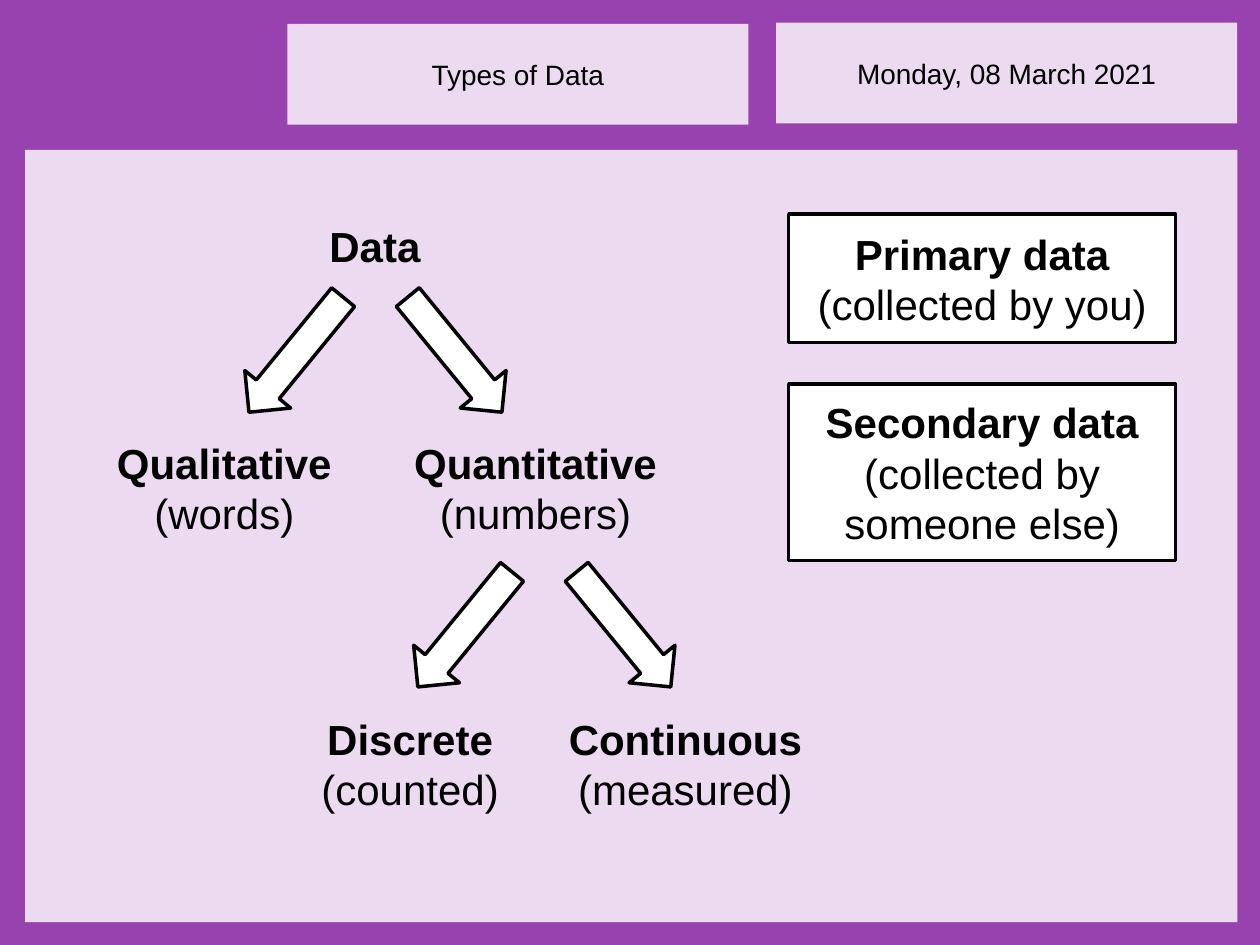
from pptx import Presentation
from pptx.dml.color import RGBColor
from pptx.enum.shapes import MSO_SHAPE
from pptx.enum.text import MSO_ANCHOR, MSO_AUTO_SIZE, PP_ALIGN
from pptx.util import Inches, Pt

PURPLE = RGBColor(0x98, 0x42, 0xB0)
LILAC = RGBColor(0xEC, 0xDA, 0xF1)
WHITE = RGBColor(0xFF, 0xFF, 0xFF)
BLACK = RGBColor(0x00, 0x00, 0x00)

COLUMNS, ROWS = 100, 75
HEADER_SIZE = (36.6, 8)
CARD_WIDTH = 30.7
ARROW_SIZE = (11.8, 4.7)
ARROW_STEP = 12.6
ARROW_TILT = 50.7


class SlideBuilder:
    font_name = "Arial"
    header_size = Pt(16)
    body_size = Pt(24)
    line_width = Pt(2)

    def __init__(self, deck):
        self.column = deck.slide_width / COLUMNS
        self.row = deck.slide_height / ROWS
        self.page = deck.slides.add_slide(deck.slide_layouts[5])
        self.page.background.fill.solid()
        self.page.background.fill.fore_color.rgb = PURPLE

    def place(self, left, top, width, height):
        return (round(left * self.column), round(top * self.row),
                round(width * self.column), round(height * self.row))

    def set_text(self, box, lines, size, bold_first=True):
        frame = box.text_frame
        frame.word_wrap = True
        frame.auto_size = MSO_AUTO_SIZE.NONE
        frame.text = "\n".join(lines)
        for index, para in enumerate(frame.paragraphs):
            para.alignment = PP_ALIGN.CENTER
            for span in para.runs:
                span.font.name = self.font_name
                span.font.size = size
                span.font.bold = bold_first and index == 0
                span.font.color.rgb = BLACK

    def shape(self, kind, area, color, outlined=False):
        shape = self.page.shapes.add_shape(kind, *self.place(*area))
        shape.shadow.inherit = False
        shape.fill.solid()
        shape.fill.fore_color.rgb = color
        if outlined:
            shape.line.color.rgb = BLACK
            shape.line.width = self.line_width
        else:
            shape.line.fill.background()
        return shape

    def title(self, text, area):
        box = self.page.shapes.title
        box.left, box.top, box.width, box.height = self.place(*area)
        box.fill.solid()
        box.fill.fore_color.rgb = LILAC
        self.set_text(box, [text], self.header_size, bold_first=False)
        box.text_frame.vertical_anchor = MSO_ANCHOR.MIDDLE

    def panel(self, area, text=None):
        box = self.shape(MSO_SHAPE.RECTANGLE, area, LILAC)
        if text:
            self.set_text(box, [text], self.header_size, bold_first=False)

    def label(self, area, *lines):
        box = self.page.shapes.add_textbox(*self.place(*area))
        self.set_text(box, lines, self.body_size)

    def card(self, area, *lines):
        box = self.shape(MSO_SHAPE.RECTANGLE, area, WHITE, outlined=True)
        self.set_text(box, lines, self.body_size)

    def fork(self, left, top):
        branches = ((MSO_SHAPE.LEFT_ARROW, -ARROW_TILT),
                    (MSO_SHAPE.RIGHT_ARROW, ARROW_TILT))
        for index, (kind, tilt) in enumerate(branches):
            area = (left + index * ARROW_STEP, top, *ARROW_SIZE)
            self.shape(kind, area, WHITE, outlined=True).rotation = tilt


def main():
    deck = Presentation()
    deck.slide_width, deck.slide_height = Inches(10), Inches(7.5)
    builder = SlideBuilder(deck)

    builder.title("Types of Data", (22.8, 1.9, *HEADER_SIZE))
    builder.panel((61.6, 1.8, *HEADER_SIZE), "Monday, 08 March 2021")
    builder.panel((2, 11.9, 96.2, 61.3))

    builder.fork(17.6, 25.8)
    builder.fork(31, 47.6)

    builder.label((20.7, 17, 18.1, 5), "Data")
    builder.label((6.7, 34.2, 22.2, 9.1), "Qualitative", "(words)")
    builder.label((31.4, 34.2, 22.2, 9.1), "Quantitative", "(numbers)")
    builder.label((24.2, 56.1, 16.7, 9.1), "Discrete", "(counted)")
    builder.label((43.3, 56.1, 22.2, 9.1), "Continuous", "(measured)")

    builder.card((62.6, 17, CARD_WIDTH, 10.2), "Primary data", "(collected by you)")
    builder.card((62.6, 30.5, CARD_WIDTH, 14), "Secondary data", "(collected by someone else)")

    deck.save("out.pptx")


if __name__ == "__main__":
    main()
